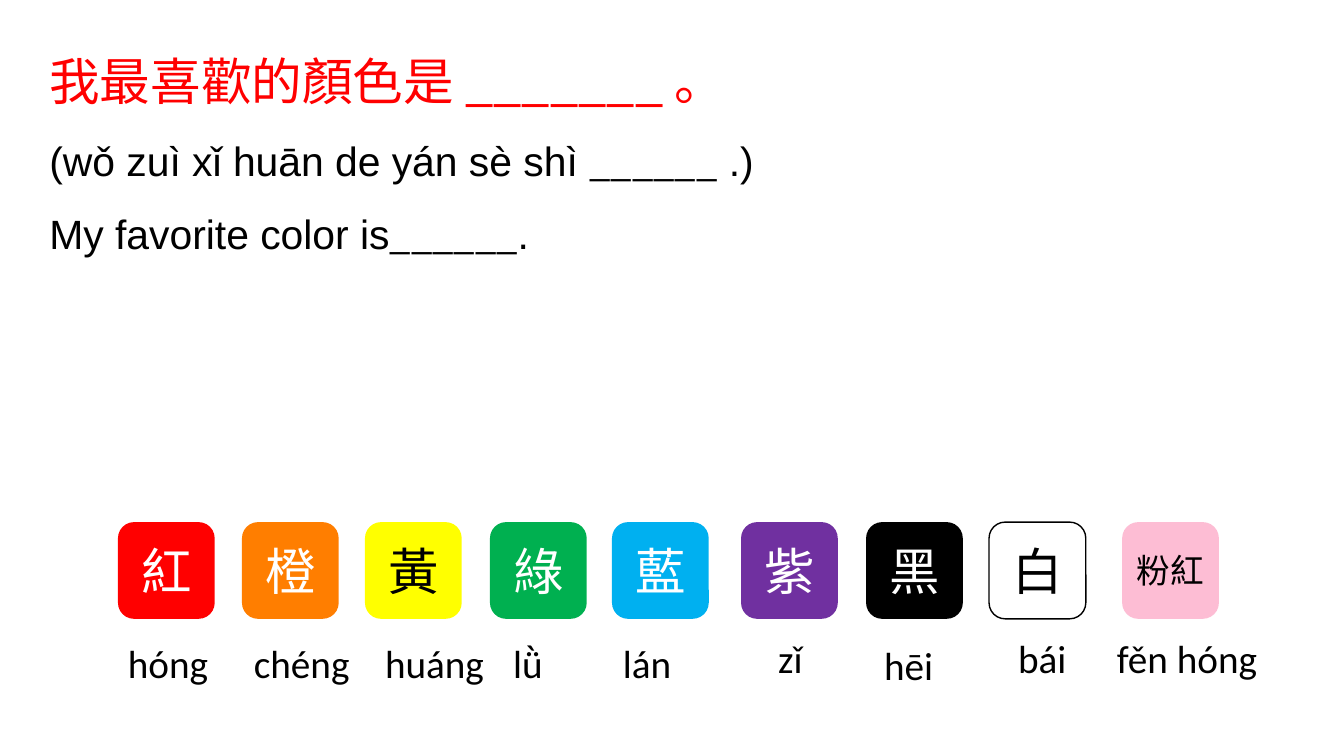
from dataclasses import dataclass
from typing import NamedTuple

from lxml import etree
from pptx import Presentation
from pptx.dml.color import RGBColor
from pptx.enum.shapes import MSO_SHAPE
from pptx.enum.text import MSO_ANCHOR, MSO_AUTO_SIZE, PP_ALIGN
from pptx.oxml.ns import qn
from pptx.util import Emu, Pt

ROUNDED = MSO_SHAPE.ROUNDED_RECTANGLE
MIDDLE, TOP = MSO_ANCHOR.MIDDLE, MSO_ANCHOR.TOP
LEFT, CENTER = PP_ALIGN.LEFT, PP_ALIGN.CENTER
NO_FIT, GROW = MSO_AUTO_SIZE.NONE, MSO_AUTO_SIZE.SHAPE_TO_FIT_TEXT
TITLE_ONLY = 5
EMU_PER_PX = 9144  # 100 px to the inch


@dataclass(frozen=True)
class Theme:
    latin: str = "Arial"
    chinese: str = "Noto Sans CJK SC"
    body: str = "Calibri"
    red: str = "FF0000"
    black: str = "000000"
    white: str = "FFFFFF"
    headline_size: float = 36.1
    sentence_size: float = 29.2
    blank_size: float = 27.3
    character_size: float = 36
    small_character_size: float = 24
    pinyin_size: float = 28


THEME = Theme()


class TextRun(NamedTuple):
    text: str
    font: str
    size: float
    color: str = THEME.black


class ColorCard(NamedTuple):
    character: str
    fill: str
    ink: str
    left: int
    pinyin: str
    pinyin_left: int
    pinyin_top: int
    pinyin_width: int
    size: float = THEME.character_size
    outline: str | None = None


CARD_TOP, CARD_SIDE, PINYIN_HEIGHT = 518, 96, 57
TITLE_BOX = (39, 11, 783, 254)

CARDS = [
    ColorCard("紅", "FF0000", THEME.white, 117, "hóng", 117, 629, 101),
    ColorCard("橙", "FF7E00", THEME.white, 240, "chéng", 242, 629, 116),
    ColorCard("黃", "FFFF00", THEME.black, 362, "huáng", 372, 629, 119),
    ColorCard("綠", "00B050", THEME.white, 486, "lǜ", 499, 629, 50),
    ColorCard("藍", "00B0F0", THEME.white, 607, "lán", 608, 629, 69),
    ColorCard("紫", "7030A0", THEME.white, 735, "zǐ", 762, 624, 45),
    ColorCard("黑", "000000", THEME.white, 859, "hēi", 867, 631, 69),
    ColorCard("白", "FFFFFF", THEME.black, 981, "bái", 1000, 624, 69,
              outline=THEME.black),
    ColorCard("粉紅", "FDBDD4", THEME.black, 1113, "fěn hóng", 1098, 624, 161,
              size=THEME.small_character_size),
]


def sentence(text: str) -> TextRun:
    return TextRun(text, THEME.latin, THEME.sentence_size)


BLANK = TextRun("______", THEME.chinese, THEME.blank_size)
SENTENCES = [
    [TextRun("我最喜歡的顏色是 _______ 。", THEME.chinese, THEME.headline_size, THEME.red)],
    [sentence("(wǒ zuì xǐ huān de yán sè shì "), BLANK, sentence(" .)")],
    [sentence("My favorite color is"), BLANK, sentence(".")],
]


def px(length: int) -> Emu:
    return Emu(length * EMU_PER_PX)


def set_attributes(target, values: dict) -> None:
    for name, value in values.items():
        setattr(target, name, value)


def add_run(paragraph, item: TextRun) -> None:
    run = paragraph.add_run()
    run.text = item.text
    set_attributes(run.font, {"name": item.font, "size": Pt(item.size)})
    run.font.color.rgb = RGBColor.from_string(item.color)
    # East Asian glyphs take their own typeface
    east_asian = etree.Element(qn("a:ea"), typeface=THEME.chinese)
    run.font._element.find(qn("a:latin")).addnext(east_asian)


def write_text(shape, lines: list[list[TextRun]], frame_format: dict,
               paragraph_format: dict) -> None:
    frame = shape.text_frame
    set_attributes(frame, frame_format)
    for index, runs in enumerate(lines):
        paragraph = frame.add_paragraph() if index else frame.paragraphs[0]
        set_attributes(paragraph, paragraph_format)
        for item in runs:
            add_run(paragraph, item)


def draw_title(slide) -> None:
    title = slide.shapes.title
    names = ("left", "top", "width", "height")
    set_attributes(title, dict(zip(names, map(px, TITLE_BOX))))
    write_text(title, SENTENCES,
               {"vertical_anchor": MIDDLE, "word_wrap": True, "auto_size": NO_FIT},
               {"alignment": LEFT, "line_spacing": 1.5})


def draw_square(slide, card: ColorCard) -> None:
    square = slide.shapes.add_shape(
        ROUNDED, px(card.left), px(CARD_TOP), px(CARD_SIDE), px(CARD_SIDE))
    square.shadow.inherit = False
    square.fill.solid()
    square.fill.fore_color.rgb = RGBColor.from_string(card.fill)
    if card.outline:
        square.line.color.rgb = RGBColor.from_string(card.outline)
        square.line.width = Pt(1)
    else:
        square.line.fill.background()
    write_text(square, [[TextRun(card.character, THEME.body, card.size, card.ink)]],
               {"vertical_anchor": MIDDLE, "word_wrap": True}, {"alignment": CENTER})


def draw_pinyin(slide, card: ColorCard) -> None:
    label = slide.shapes.add_textbox(
        px(card.pinyin_left), px(card.pinyin_top), px(card.pinyin_width), px(PINYIN_HEIGHT))
    write_text(label, [[TextRun(card.pinyin, THEME.body, THEME.pinyin_size)]],
               {"vertical_anchor": TOP, "word_wrap": False, "auto_size": GROW},
               {"alignment": LEFT})


def main() -> None:
    presentation = Presentation()
    set_attributes(presentation, {"slide_width": px(1333), "slide_height": px(750)})
    slide = presentation.slides.add_slide(presentation.slide_layouts[TITLE_ONLY])

    # Sentence pattern
    draw_title(slide)

    # Colour cards with their pronunciation
    for card in CARDS:
        draw_square(slide, card)
        draw_pinyin(slide, card)

    presentation.save("out.pptx")


if __name__ == "__main__":
    main()
